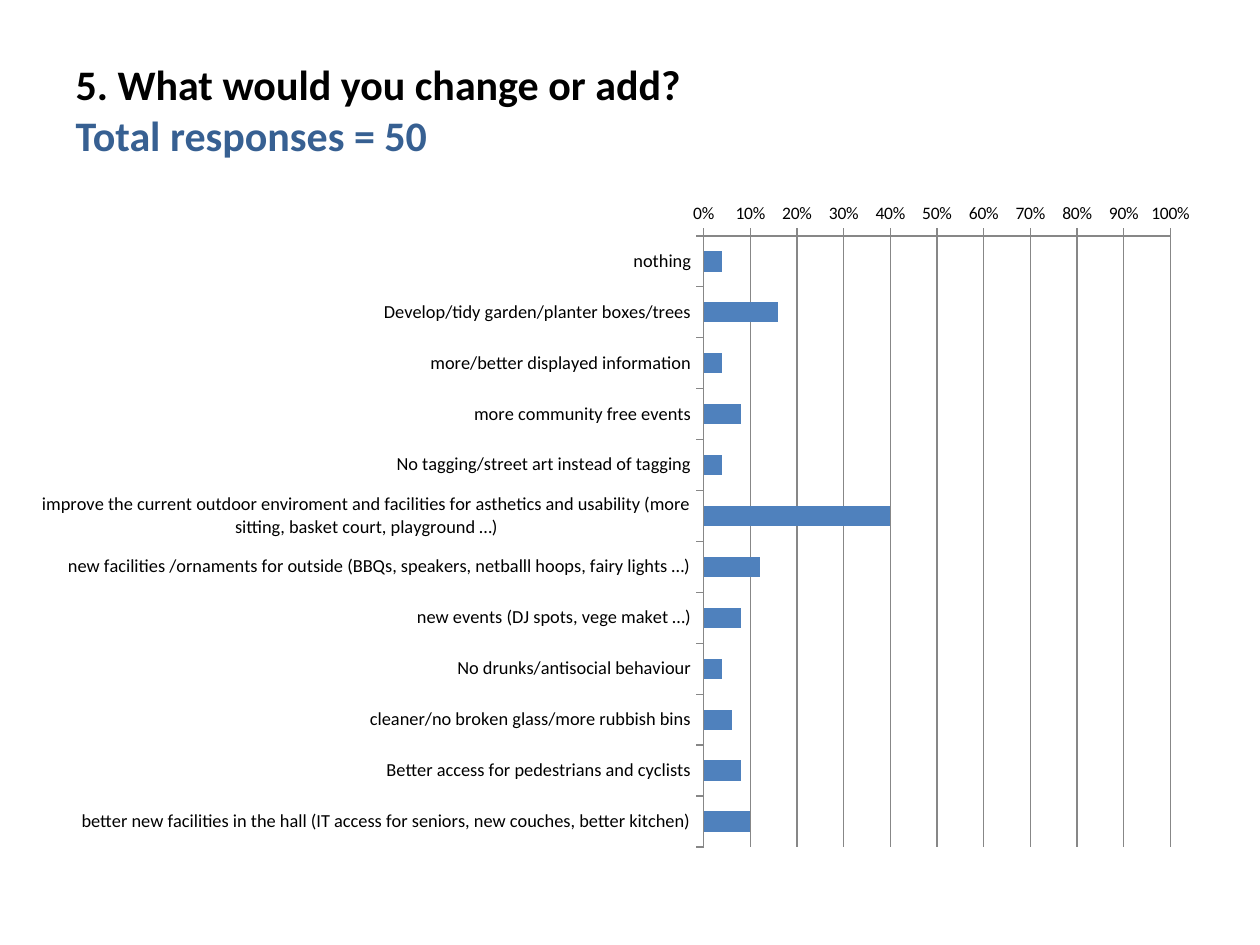
from dataclasses import dataclass

from lxml.etree import SubElement
from pptx import Presentation
from pptx.chart.data import CategoryChartData
from pptx.dml.color import RGBColor as RGB
from pptx.enum.chart import XL_CHART_TYPE as ChartType, XL_TICK_MARK as Tick
from pptx.enum.text import MSO_ANCHOR as Anchor, PP_ALIGN as Align
from pptx.oxml.ns import qn
from pptx.util import Cm, Pt


@dataclass(frozen=True)
class Theme:
    """Colours, font and type sizes of the slide."""
    font: str = "Calibri"
    text: RGB = RGB(0x00, 0x00, 0x00)
    accent: RGB = RGB(0x37, 0x60, 0x92)
    bar: RGB = RGB(0x4F, 0x81, 0xBD)
    line: RGB = RGB(0x87, 0x87, 0x87)
    title: Pt = Pt(24)
    category: Pt = Pt(10.5)
    value: Pt = Pt(10)


THEME = Theme()

RESPONSES = {
    "nothing": 0.04,
    "Develop/tidy garden/planter boxes/trees": 0.16,
    "more/better displayed information": 0.04,
    "more community free events": 0.08,
    "No tagging/street art instead of tagging": 0.04,
    "improve the current outdoor enviroment and facilities for asthetics "
    "and usability (more sitting, basket court, playground …)": 0.4,
    "new facilities /ornaments for outside (BBQs, speakers, netballl hoops, "
    "fairy lights …)": 0.12,
    "new events (DJ spots, vege maket …)": 0.08,
    "No drunks/antisocial behaviour": 0.04,
    "cleaner/no broken glass/more rubbish bins": 0.06,
    "Better access for pedestrians and cyclists": 0.08,
    "better new facilities in the hall (IT access for seniors, new couches, "
    "better kitchen)": 0.1,
}


def set_title(s, question, total):
    """Write the question and the response total in the title placeholder."""
    sp = s.shapes.title
    sp.left, sp.top, sp.width, sp.height = Cm(1.27), Cm(0.76), Cm(22.86), Cm(3.18)
    tf = sp.text_frame
    tf.vertical_anchor = Anchor.MIDDLE
    tf.margin_bottom = Cm(0.43)
    p = tf.paragraphs[0]
    p.alignment = Align.LEFT
    p.font.name, p.font.size, p.font.bold = THEME.font, THEME.title, True
    for text, color in ((question, THEME.text), (total, THEME.accent)):
        if p.runs:
            p.add_line_break()
        r = p.add_run()
        r.text = text
        r.font.color.rgb = color


def set_plot_area(chart, **fractions):
    """Fix the inner plot area as fractions of the chart frame."""
    area = chart.plots[0]._element.getparent()
    layout = area.find(qn("c:layout"))
    if layout is None:
        layout = SubElement(area, qn("c:layout"))
        area.insert(0, layout)
    manual = SubElement(layout, qn("c:manualLayout"))
    settings = {"layoutTarget": "inner", "xMode": "edge", "yMode": "edge", **fractions}
    for tag, value in settings.items():
        SubElement(manual, qn(f"c:{tag}")).set("val", str(value))


def style_axis(axis, size):
    """Give an axis its type size, outside ticks and grey line."""
    axis.tick_labels.font.size = size
    axis.major_tick_mark, axis.minor_tick_mark = Tick.OUTSIDE, Tick.NONE
    axis.format.line.color.rgb = THEME.line
    axis.format.line.width = Pt(0.75)


def add_bar_chart(s, responses):
    """Add the bar chart with the share of each response."""
    data = CategoryChartData(number_format="0%")
    data.categories = list(responses)
    data.add_series("Series 1", list(responses.values()))
    chart = s.shapes.add_chart(ChartType.BAR_CLUSTERED, Cm(0.43), Cm(3.81),
                               Cm(24.13), Cm(13.54), data).chart
    chart.has_legend = chart.has_title = False
    chart.font.name, chart.font.size = THEME.font, THEME.value
    chart.font.color.rgb = THEME.text

    plot = chart.plots[0]
    plot.gap_width, plot.vary_by_categories = 150, False
    fill = plot.series[0].format.fill
    fill.solid()
    fill.fore_color.rgb = THEME.bar

    style_axis(chart.category_axis, THEME.category)
    chart.category_axis.reverse_order = True

    axis = chart.value_axis
    style_axis(axis, THEME.value)
    axis.minimum_scale, axis.maximum_scale, axis.major_unit = 0, 1, 0.1
    axis.tick_labels.number_format = "0%"
    axis.tick_labels.number_format_is_linked = False
    axis.has_major_gridlines = True
    axis.major_gridlines.format.line.color.rgb = THEME.line
    axis.major_gridlines.format.line.width = Pt(0.75)
    set_plot_area(chart, x=0.57, y=0.07, w=0.39, h=0.91)


def main():
    """Build and save the slide."""
    prs = Presentation()
    prs.slide_width, prs.slide_height = Cm(25.4), Cm(19.05)
    s = prs.slides.add_slide(prs.slide_layouts[5])
    set_title(s, "5. What would you change or add?", "Total responses = 50")
    add_bar_chart(s, RESPONSES)
    prs.save("out.pptx")


if __name__ == "__main__":
    main()
